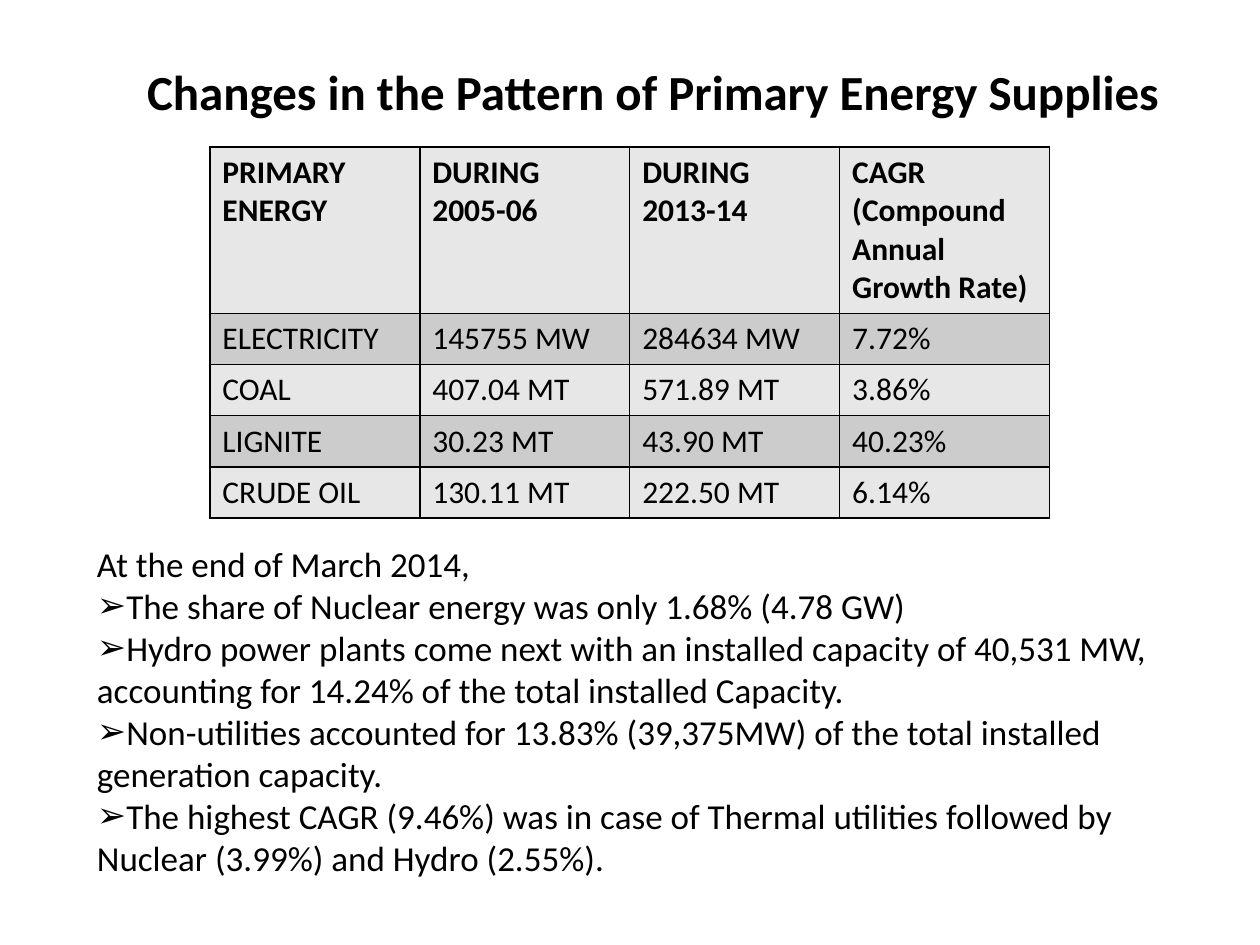
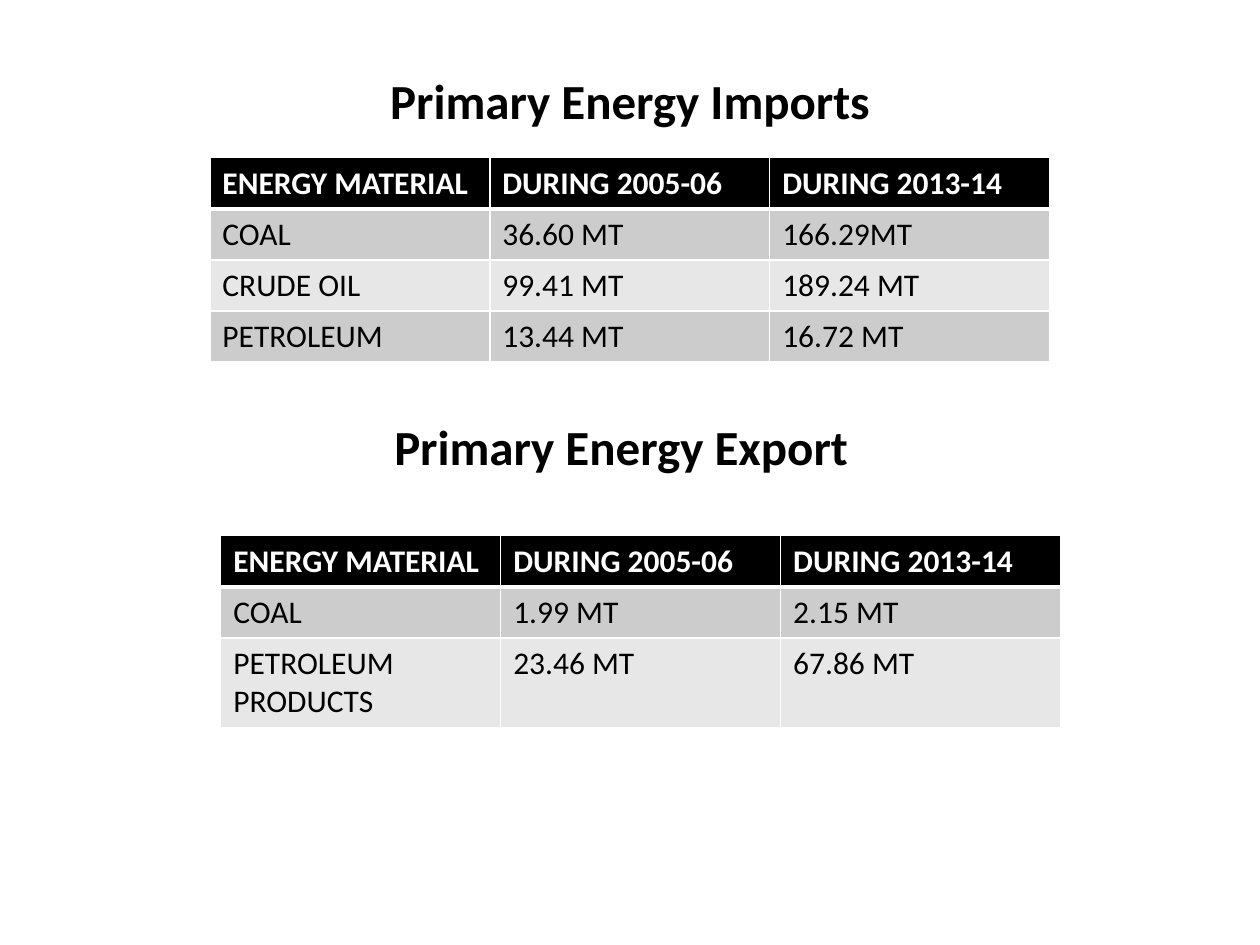
"""Build two slides on primary energy supplies, imports and exports."""
import pptx
import pptx.dml.color
import pptx.enum.text
import pptx.oxml
import pptx.oxml.ns
import pptx.util
from pptx.util import Cm, Pt

FONT = "Calibri"
COLORS = {"ink": "000000", "paper": "FFFFFF", "dark_band": "CCCCCC", "light_band": "E7E7E7"}
TABLE_WIDTH = 16.93
ROW_HEIGHT = 1.03
TITLE_SIZE = 28

SUPPLIES = [
    ["PRIMARY ENERGY", "DURING 2005-06", "DURING 2013-14", "CAGR (Compound Annual Growth Rate)"],
    ["ELECTRICITY", "145755 MW", "284634 MW", "7.72%"],
    ["COAL", "407.04 MT", "571.89 MT", "3.86%"],
    ["LIGNITE", "30.23 MT", "43.90 MT", "40.23%"],
    ["CRUDE OIL", "130.11 MT", "222.50 MT", "6.14%"],
]
TRADE_HEADER = ["ENERGY MATERIAL", "DURING 2005-06", "DURING 2013-14"]
IMPORTS = [
    TRADE_HEADER,
    ["COAL", "36.60 MT", "166.29MT"],
    ["CRUDE OIL", "99.41 MT", "189.24 MT"],
    ["PETROLEUM", "13.44 MT", "16.72 MT"],
]
EXPORTS = [
    TRADE_HEADER,
    ["COAL", "1.99 MT", "2.15 MT"],
    ["PETROLEUM PRODUCTS", "23.46 MT", "67.86 MT"],
]
CAPACITY_INTRO = "At the end of March 2014,"
CAPACITY_FACTS = [
    "The share of Nuclear energy was only 1.68% (4.78 GW)",
    "Hydro power plants come next with an installed capacity of 40,531 MW, "
    "accounting for 14.24% of the total installed Capacity.",
    "Non-utilities accounted for 13.83% (39,375MW) of the total installed generation capacity.",
    "The highest CAGR (9.46%) was in case of Thermal utilities followed by "
    "Nuclear (3.99%) and Hydro (2.55%).",
]


def rgb(name):
    return pptx.dml.color.RGBColor.from_string(COLORS[name])


def place(shape, left, top, width, height):
    shape.left, shape.top, shape.width, shape.height = map(Cm, (left, top, width, height))


def write(paragraph, text, size, bold=False, color="ink"):
    paragraph.text = text
    for run in paragraph.runs:
        run.font.name = FONT
        run.font.size = Pt(size)
        run.font.bold = bold
        run.font.color.rgb = rgb(color)


def write_heading(shape, text):
    frame = shape.text_frame
    frame.word_wrap = True
    frame.auto_size = pptx.enum.text.MSO_AUTO_SIZE.NONE
    frame.vertical_anchor = pptx.enum.text.MSO_ANCHOR.MIDDLE
    heading = frame.paragraphs[0]
    write(heading, text, TITLE_SIZE, bold=True)
    heading.alignment = pptx.enum.text.PP_ALIGN.CENTER


def add_title(slide, text, *box):
    place(slide.shapes.title, *box)
    write_heading(slide.shapes.title, text)


def set_bullet(paragraph, symbol=None):
    properties = paragraph._p.get_or_add_pPr()
    properties.set("marL", "0")
    properties.set("indent", "0")
    bullet = pptx.oxml.parse_xml(
        f'<a:{"buChar" if symbol else "buNone"} {pptx.oxml.ns.nsdecls("a")}/>')
    if symbol:
        bullet.set("char", symbol)
    properties.append(bullet)


def add_facts(slide, intro, facts, *box):
    body = slide.placeholders[1]
    place(body, *box)
    frame = body.text_frame
    frame.auto_size = pptx.enum.text.MSO_AUTO_SIZE.NONE
    for index, line in enumerate([intro, *facts]):
        paragraph = frame.add_paragraph() if index else frame.paragraphs[0]
        write(paragraph, line, 20)
        paragraph.space_before = Pt(0)
        set_bullet(paragraph, "➢" if index else None)


def set_borders(cell, color, widths):
    properties = cell._tc.get_or_add_tcPr()
    for side, width in widths.items():
        properties.append(pptx.oxml.parse_xml(
            f'<a:ln{side} {pptx.oxml.ns.nsdecls("a")} w="{Pt(width)}"><a:solidFill>'
            f'<a:srgbClr val="{COLORS[color]}"/></a:solidFill></a:ln{side}>'))


def add_energy_table(slide, rows, left, top, heights=None, dark_header=True):
    heights = heights or [ROW_HEIGHT] * len(rows)
    column_count = len(rows[0])
    table = slide.shapes.add_table(
        len(rows), column_count, Cm(left), Cm(top), Cm(TABLE_WIDTH), Cm(sum(heights))).table
    for column in table.columns:
        column.width = Cm(TABLE_WIDTH / column_count)
    border = "paper" if dark_header else "ink"
    header_rule = 3 if dark_header else 1
    for index, values in enumerate(rows):
        table.rows[index].height = Cm(heights[index])
        inverted = dark_header and index == 0
        band = "ink" if inverted else "dark_band" if index % 2 else "light_band"
        widths = {"L": 1, "R": 1, "T": header_rule if index == 1 else 1,
                  "B": header_rule if index == 0 else 1}
        for cell, value in zip(table.rows[index].cells, values):
            set_borders(cell, border, widths)
            cell.fill.solid()
            cell.fill.fore_color.rgb = rgb(band)
            write(cell.text_frame.paragraphs[0], value, 18, bold=index == 0,
                  color="paper" if inverted else "ink")


def build_supplies(deck):
    slide = deck.slides.add_slide(deck.slide_layouts[1])
    add_title(slide, "Changes in the Pattern of Primary Energy Supplies", 2.36, 0.69, 21.6, 2.3)
    add_energy_table(slide, SUPPLIES, 4.23, 2.96,
                     heights=[3.36] + [ROW_HEIGHT] * 4, dark_header=False)
    add_facts(slide, CAPACITY_INTRO, CAPACITY_FACTS, 1.7, 10.8, 22.66, 7.6)


def build_trade(deck):
    slide = deck.slides.add_slide(deck.slide_layouts[5])
    add_title(slide, "Primary Energy Imports", 1.9, 1.06, 21.6, 1.9)
    add_energy_table(slide, IMPORTS, 4.23, 3.18)
    export_heading = slide.shapes.add_textbox(Cm(5.64), Cm(8.26), Cm(13.76), Cm(1.45))
    write_heading(export_heading, "Primary Energy Export")
    add_energy_table(slide, EXPORTS, 4.45, 10.8, heights=[ROW_HEIGHT, ROW_HEIGHT, 1.78])


def main():
    deck = pptx.Presentation()
    deck.slide_width, deck.slide_height = Cm(25.4), Cm(19.05)
    build_supplies(deck)
    build_trade(deck)
    deck.save("out.pptx")


if __name__ == "__main__":
    main()
